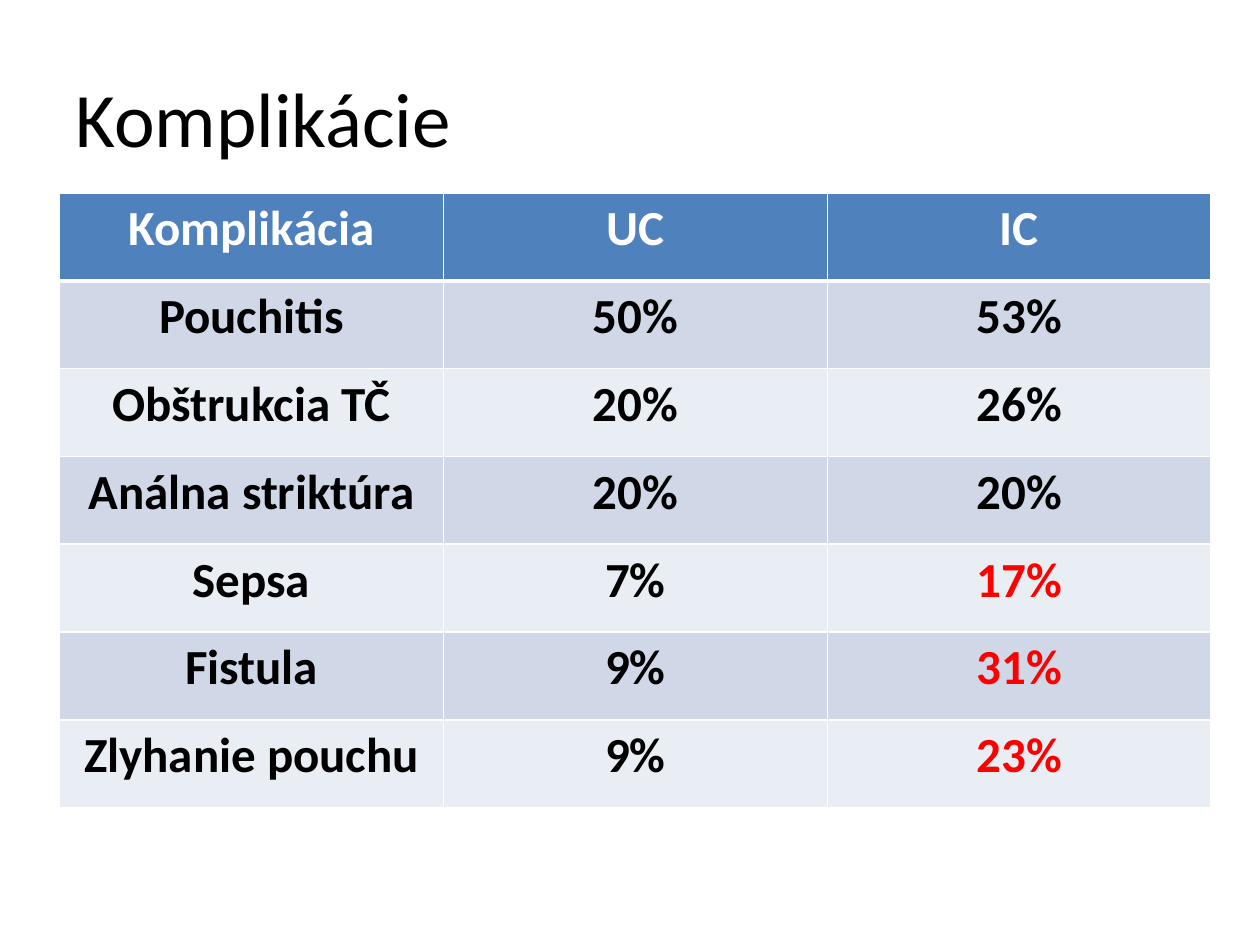
import pptx
import pptx.dml.color
import pptx.enum.text
import pptx.oxml.ns
import pptx.util
from lxml import etree

Pt = pptx.util.Pt
FONT = "Calibri"
WHITE, BLACK, RED = "FFFFFF", "000000", "FF0000"
HEADER_FILL = "4F81BD"
BAND_FILLS = ["D0D8E8", "E9EDF4"]
ROWS = [
    ("Komplikácia", "UC", "IC"),
    ("Pouchitis", "50%", "53%"),
    ("Obštrukcia TČ", "20%", "26%"),
    ("Análna striktúra", "20%", "20%"),
    ("Sepsa", "7%", "17%"),
    ("Fistula", "9%", "31%"),
    ("Zlyhanie pouchu", "9%", "23%"),
]
HIGHLIGHTED = {"17%", "31%", "23%"}
COLUMN_WIDTH = 219.4
ROW_HEIGHT = 50.2


def color(value):
    return pptx.dml.color.RGBColor.from_string(value)


def write_text(frame, text, size, fill=BLACK, bold=False, align="LEFT"):
    paragraph = frame.paragraphs[0]
    paragraph.alignment = getattr(pptx.enum.text.PP_ALIGN, align)
    run = paragraph.add_run()
    run.text = text
    run.font.name = FONT
    run.font.size = Pt(size)
    run.font.bold = bold
    run.font.color.rgb = color(fill)


def add_border(cell, side, width):
    qualified = pptx.oxml.ns.qn
    properties = cell._tc.get_or_add_tcPr()
    line = etree.SubElement(properties, qualified(f"a:ln{side}"), w=str(Pt(width)))
    fill = etree.SubElement(line, qualified("a:solidFill"))
    etree.SubElement(fill, qualified("a:srgbClr"), val=WHITE)


def format_cell(cell, text, row_index):
    is_header = row_index == 0
    for side in "LRTB":
        below_header = (side, row_index) in (("B", 0), ("T", 1))
        add_border(cell, side, 3 if below_header else 1)
    cell.fill.solid()
    cell.fill.fore_color.rgb = color(
        HEADER_FILL if is_header else BAND_FILLS[(row_index - 1) % 2]
    )
    text_color = WHITE if is_header else RED if text in HIGHLIGHTED else BLACK
    write_text(cell.text_frame, text, 28, fill=text_color, bold=True, align="CENTER")


def add_title(slide, text):
    box = slide.shapes.add_textbox(Pt(36), Pt(21.6), Pt(648), Pt(90))
    frame = box.text_frame
    frame.word_wrap = True
    frame.vertical_anchor = pptx.enum.text.MSO_ANCHOR.MIDDLE
    write_text(frame, text, 44)


def add_complications_table(slide, left, top):
    column_count = len(ROWS[0])
    table = slide.shapes.add_table(
        len(ROWS), column_count, Pt(left), Pt(top),
        Pt(COLUMN_WIDTH * column_count), Pt(ROW_HEIGHT * len(ROWS)),
    ).table
    for column in table.columns:
        column.width = Pt(COLUMN_WIDTH)
    for row_index, texts in enumerate(ROWS):
        table.rows[row_index].height = Pt(ROW_HEIGHT)
        for column_index, text in enumerate(texts):
            format_cell(table.cell(row_index, column_index), text, row_index)


def main():
    presentation = pptx.Presentation()
    presentation.slide_width = Pt(720)
    presentation.slide_height = Pt(540)
    slide = presentation.slides.add_slide(presentation.slide_layouts[6])
    add_complications_table(slide, 34, 110.3)
    add_title(slide, "Komplikácie")
    presentation.save("out.pptx")


if __name__ == "__main__":
    main()
